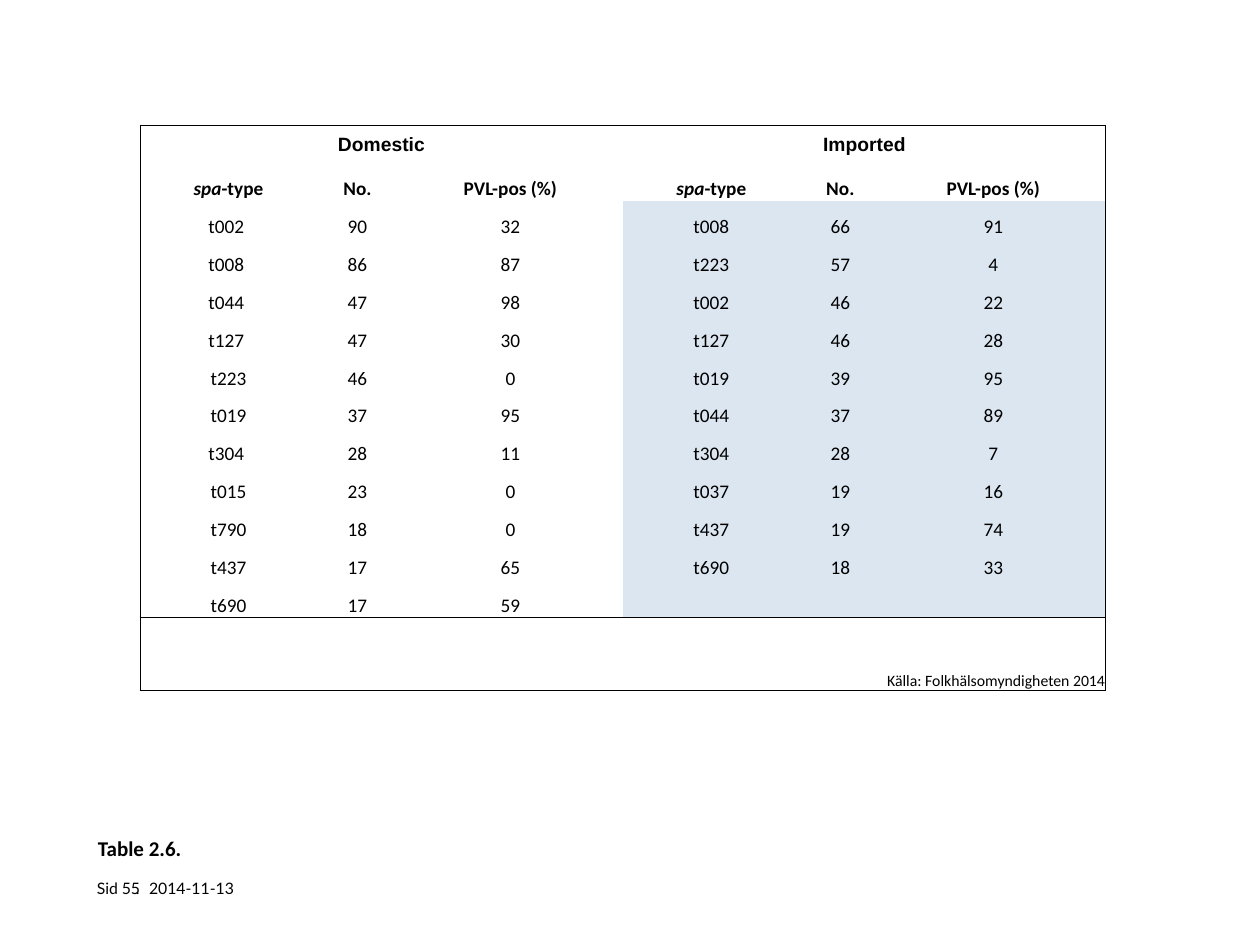
from dataclasses import dataclass

from lxml import etree
from pptx import Presentation
from pptx.dml.color import RGBColor
from pptx.enum import text as t
from pptx.oxml import ns
from pptx import util as u

PX = u.Inches(1) // 126
BLACK = RGBColor(0x00, 0x00, 0x00)
PALE_BLUE = RGBColor(0xDC, 0xE6, 0xF1)
NO_STYLE_NO_GRID = "{2D5ABB26-0587-4C30-8999-92F81FD0307C}"
CENTER, LEFT, RIGHT = t.PP_ALIGN.CENTER, t.PP_ALIGN.LEFT, t.PP_ALIGN.RIGHT

HEADINGS = ("spa-type", "No.", "PVL-pos (%)")
DOMESTIC = (
    ("t002 ", 90, 32), ("t008 ", 86, 87), ("t044 ", 47, 98), ("t127 ", 47, 30),
    ("t223", 46, 0), ("t019", 37, 95), ("t304 ", 28, 11), ("t015", 23, 0),
    ("t790", 18, 0), ("t437", 17, 65), ("t690", 17, 59),
)
IMPORTED = (
    ("t008", 66, 91), ("t223", 57, 4), ("t002", 46, 22), ("t127", 46, 28),
    ("t019", 39, 95), ("t044", 37, 89), ("t304", 28, 7), ("t037", 19, 16),
    ("t437", 19, 74), ("t690", 18, 33), ("", "", ""),
)
SOURCE = "Källa: Folkhälsomyndigheten 2014"
GROUP_WIDTHS = (177, 81, 225)
BODY_HEIGHT, SPACER_HEIGHT, SOURCE_HEIGHT = 493, 35, 38
FIRST_DATA_ROW = 2
LAST_DATA_ROW = FIRST_DATA_ROW + len(DOMESTIC) - 1
SPACER_ROW, SOURCE_ROW = LAST_DATA_ROW + 1, LAST_DATA_ROW + 2
COLUMNS = 2 * len(HEADINGS)


@dataclass(frozen=True)
class Label:
    text: str
    left: int
    top: int
    width: int
    height: int
    align: t.PP_ALIGN = LEFT
    anchor: t.MSO_ANCHOR = t.MSO_ANCHOR.BOTTOM
    font: str = "Lato"
    size: int = 9
    bold: bool = False
    wrap: bool = True
    grow: bool = False
    inset_x: int = 0
    inset_y: int = 0
    line_points: int = 0


LABELS = (
    Label(".", 129, 873, 20, 32, anchor=t.MSO_ANCHOR.TOP, grow=True,
          inset_x=13, inset_y=6),
    Label("Sid", 97, 879, 22, 19, anchor=t.MSO_ANCHOR.TOP, wrap=False, grow=True),
    Label("55", 98, 873, 42, 25, align=RIGHT),
    Label("2014-11-13", 149, 873, 108, 25),
    Label("Table 2.6.", 98, 804, 403, 57, font="Calibri", size=12, bold=True,
          line_points=34),
)


def format_runs(paragraph, font: str, size: int, bold: bool) -> None:
    for run in paragraph.runs:
        run.font.name = font
        run.font.size = u.Pt(size)
        run.font.bold = bold
        run.font.color.rgb = BLACK


def add_label(slide, label: Label) -> None:
    box = slide.shapes.add_textbox(
        label.left * PX, label.top * PX, label.width * PX, label.height * PX)
    frame = box.text_frame
    frame.word_wrap = label.wrap
    if label.grow:
        frame.auto_size = t.MSO_AUTO_SIZE.SHAPE_TO_FIT_TEXT
    frame.vertical_anchor = label.anchor
    frame.margin_left = frame.margin_right = label.inset_x * PX
    frame.margin_top = frame.margin_bottom = label.inset_y * PX
    frame.text = label.text
    paragraph = frame.paragraphs[0]
    paragraph.alignment = label.align
    if label.line_points:
        paragraph.line_spacing = u.Pt(label.line_points)
    format_runs(paragraph, label.font, label.size, label.bold)


def set_border(cell, side: str, visible: bool) -> None:
    """Set side L, R, T or B of a cell to a thin black line or to none."""
    line = etree.SubElement(
        cell._tc.get_or_add_tcPr(), ns.qn(f"a:ln{side}"), w=str(u.Pt(0.5)))
    if visible:
        fill = etree.SubElement(line, ns.qn("a:solidFill"))
        etree.SubElement(fill, ns.qn("a:srgbClr"), val=str(BLACK))
    else:
        etree.SubElement(line, ns.qn("a:noFill"))


def frame_cell(cell, row: int, column: int) -> None:
    """Border the table's outside and the line under the data rows."""
    edges = {
        "L": column == 0,
        "R": column + cell.span_width >= COLUMNS,
        "T": row in (0, SPACER_ROW),
        "B": row in (LAST_DATA_ROW, SOURCE_ROW),
    }
    for side, visible in edges.items():
        set_border(cell, side, visible)


def fill_cell(cell, content: str, row: int) -> None:
    cell.margin_left = cell.margin_right = cell.margin_top = PX
    cell.margin_bottom = 0
    cell.vertical_anchor = t.MSO_ANCHOR.MIDDLE if row == 0 else t.MSO_ANCHOR.BOTTOM
    paragraph = cell.text_frame.paragraphs[0]
    paragraph.alignment = RIGHT if row == SOURCE_ROW else CENTER
    if not content:
        etree.SubElement(paragraph._p, ns.qn("a:endParaRPr"), sz="900")
        return
    if content == "spa-type":
        paragraph.text = "spa"
        paragraph.runs[0].font.italic = True
        paragraph.add_run().text = "-type"
    else:
        paragraph.text = content
    format_runs(paragraph, "Arial" if row == 0 else "Calibri",
                9 if row == SOURCE_ROW else 11, row < FIRST_DATA_ROW)


def add_spa_table(slide) -> None:
    blank = ("",) * COLUMNS
    contents = [
        ("Domestic", "", "", "Imported", "", ""),
        HEADINGS * 2,
        *(home + abroad for home, abroad in zip(DOMESTIC, IMPORTED)),
        blank,
        ("", "", SOURCE, "", "", ""),
    ]
    total_height = BODY_HEIGHT + SPACER_HEIGHT + SOURCE_HEIGHT
    graphic = slide.shapes.add_table(
        len(contents), COLUMNS, 140 * PX, 125 * PX,
        2 * sum(GROUP_WIDTHS) * PX, total_height * PX)
    table = graphic.table
    table.first_row = table.horz_banding = False
    table._tbl.tblPr.find(ns.qn("a:tableStyleId")).text = NO_STYLE_NO_GRID
    for column, width in zip(table.columns, GROUP_WIDTHS * 2):
        column.width = width * PX
    for row in table.rows:
        row.height = BODY_HEIGHT * PX // SPACER_ROW
    table.rows[SPACER_ROW].height = SPACER_HEIGHT * PX
    table.rows[SOURCE_ROW].height = SOURCE_HEIGHT * PX
    for row, first, last in ((0, 0, 2), (0, 3, 5), (SOURCE_ROW, 2, 5)):
        table.cell(row, first).merge(table.cell(row, last))

    for row, values in enumerate(contents):
        for column, value in enumerate(values):
            cell = table.cell(row, column)
            frame_cell(cell, row, column)
            if (FIRST_DATA_ROW <= row <= LAST_DATA_ROW
                    and column >= len(HEADINGS)):
                cell.fill.solid()
                cell.fill.fore_color.rgb = PALE_BLUE
            else:
                cell.fill.background()
            fill_cell(cell, str(value), row)


def main() -> None:
    deck = Presentation()
    deck.slide_width, deck.slide_height = u.Inches(10), u.Inches(7.5)
    slide = deck.slides.add_slide(deck.slide_layouts[6])
    add_spa_table(slide)
    for label in LABELS:
        add_label(slide, label)
    deck.save("out.pptx")


if __name__ == "__main__":
    main()
